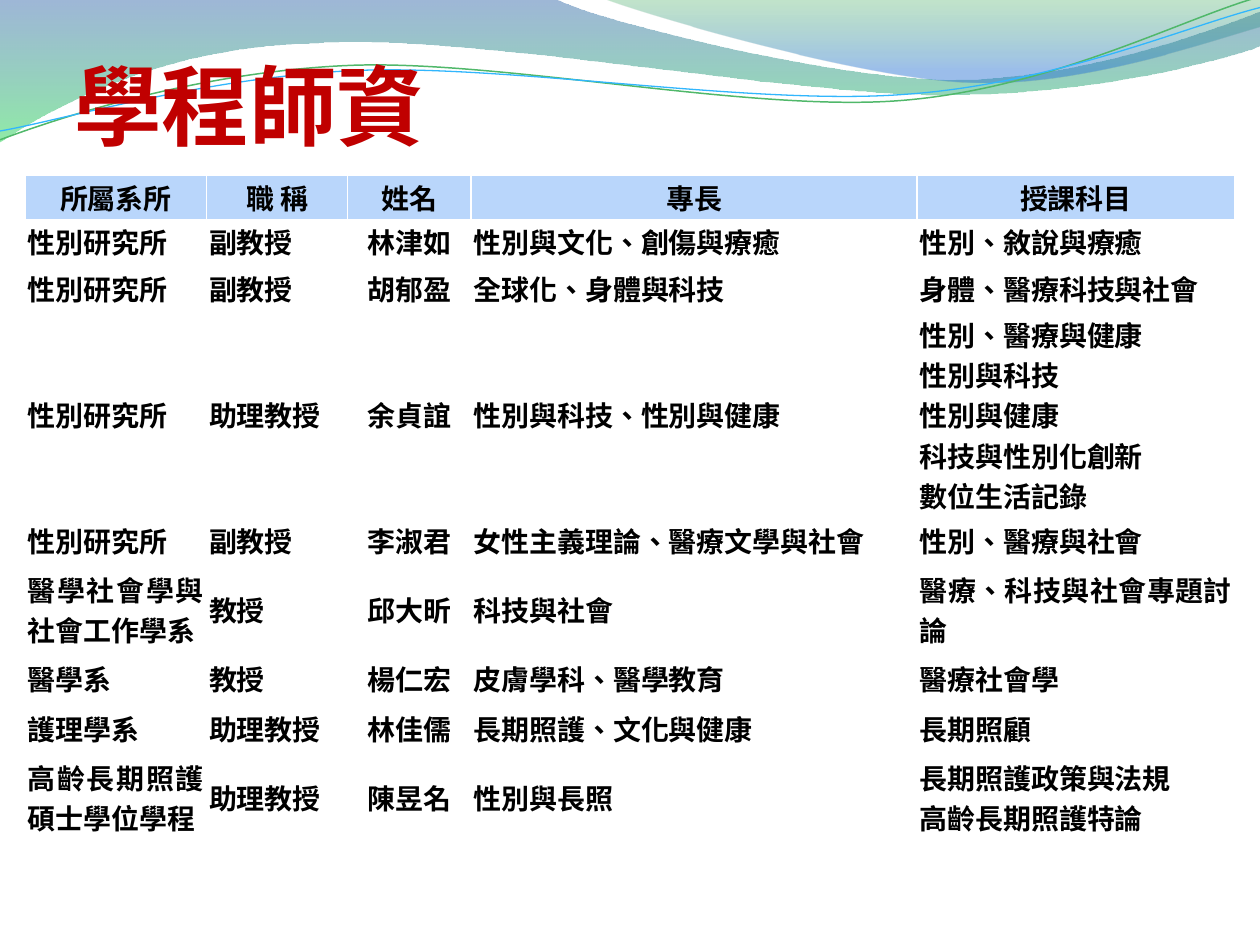
from lxml.etree import SubElement
from pptx import Presentation
from pptx.dml.color import RGBColor
from pptx.enum.lang import MSO_LANGUAGE_ID as LANG
from pptx.enum.text import MSO_ANCHOR as ANCHOR, MSO_AUTO_SIZE as AUTO, PP_ALIGN as ALIGN
from pptx.oxml.ns import qn
from pptx.util import Inches, Pt

FONT = "DejaVu Sans"
COLORS = {
    "title": "C00000", "text": "000000", "header": "B9D6FB", "border": "FFFFFF",
    "navy": "2960A7", "mint": "35DA5E", "leaf": "36A752", "blue": "2472D3",
    "green_line": "50B86A", "sky_line": "31B6FD",
}
TITLE = "學程師資"
HEADER = ("所屬系所", "職 稱", "姓名", "專長", "授課科目")
FACULTY = [
    ("性別研究所", "副教授", "林津如", "性別與文化、創傷與療癒", "性別、敘說與療癒"),
    ("性別研究所", "副教授", "胡郁盈", "全球化、身體與科技", "身體、醫療科技與社會"),
    ("性別研究所", "助理教授", "余貞誼", "性別與科技、性別與健康",
     "性別、醫療與健康\n性別與科技\n性別與健康\n科技與性別化創新\n數位生活記錄"),
    ("性別研究所", "副教授", "李淑君", "女性主義理論、醫療文學與社會", "性別、醫療與社會"),
    ("醫學社會學與社會工作學系", "教授", "邱大昕", "科技與社會", "醫療、科技與社會專題討論"),
    ("醫學系", "教授", "楊仁宏", "皮膚學科、醫學教育", "醫療社會學"),
    ("護理學系", "助理教授", "林佳儒", "長期照護、文化與健康", "長期照顧"),
    ("高齡長期照護碩士學位學程", "助理教授", "陳昱名", "性別與長照",
     "長期照護政策與法規\n高齡長期照護特論"),
]
COL_WIDTHS = (1.44, 1.12, 0.98, 3.54, 2.52)
ROW_HEIGHTS = (0.35, 0.35, 0.4, 0.69, 0.4, 0.69, 0.4, 0.4, 0.69)
NAME_COL = 2

# Each path is a start point, then segments of one (line) or three (Bezier) points.
BANDS = [
    ([(0, 0), [(4.4, -0.01)], [(4.76, 0.17), (6.64, 0.63), (7.58, 0.63)],
      [(8.53, 0.63), (9.58, 0.26), (10, 0.09)], [(10.01, 0.36)],
      [(9.83, 0.44), (8.7, 0.76), (7.46, 0.75)], [(6.22, 0.75), (3.82, 0.28), (2.57, 0.34)],
      [(1.29, 0.36), (0.46, 0.83), (-0.01, 1.13)]],
     [(0, "navy", 45), (1, "mint", 55)]),
    ([(4.79, -0.01), [(5.09, 0.11), (6.82, 0.62), (7.69, 0.65)],
      [(8.56, 0.69), (9.61, 0.32), (10, 0.21)], [(10, 0)]],
     [(0, "leaf", 30), (0.8, "blue", 45)]),
]
STROKES = [
    ([(0, 1.11), [(0.48, 0.93), (1.58, 0.57), (2.77, 0.52)],
      [(3.95, 0.47), (5.93, 0.89), (7.13, 0.8)], [(8.33, 0.71), (9.38, 0.15), (9.98, -0.02)]],
     "green_line", 0.85),
    ([(0, 1.04), [(0.47, 0.96), (1.64, 0.61), (2.83, 0.56)],
      [(4.03, 0.51), (5.97, 0.84), (7.17, 0.75)], [(8.36, 0.67), (9.41, 0.21), (10, 0.06)]],
     "sky_line", 0.75),
]


def rgb(name):
    return RGBColor.from_string(COLORS[name])


def write(tf, text, size=16, color="text", align=ALIGN.JUSTIFY):
    for i, line in enumerate(text.split("\n")):
        p = tf.paragraphs[0] if i == 0 else tf.add_paragraph()
        p.alignment = align
        r = p.add_run()
        r.text = line
        r.font.size, r.font.bold, r.font.name = Pt(size), True, FONT
        r.font.language_id = LANG.TRADITIONAL_CHINESE
        r.font.color.rgb = rgb(color)


def add_curve(shapes, path, close):
    start, *segments = path
    points = [(Inches(x), Inches(y)) for seg in segments for x, y in seg]
    builder = shapes.build_freeform(*map(Inches, start))
    builder.add_line_segments(points, close=close)
    s = builder.convert_to_shape()
    s.shadow.inherit = False
    lines = iter(list(s._element.iter(qn("a:lnTo"))))
    for seg in segments:
        parts = [next(lines) for _ in seg]
        if len(parts) == 3:
            curve = parts[0].makeelement(qn("a:cubicBezTo"))
            parts[0].addprevious(curve)
            for part in parts:
                curve.append(part[0])
                part.getparent().remove(part)
    return s


def add_waves(shapes):
    for path, stops in BANDS:
        s = add_curve(shapes, path, True)
        s.line.fill.background()
        s.fill.gradient()
        s.fill.gradient_angle = 270
        for stop, (pos, color, opacity) in zip(s.fill.gradient_stops, stops):
            stop.position = pos
            stop.color.rgb = rgb(color)
            srgb = stop._gs.find(qn("a:srgbClr"))
            SubElement(srgb, qn("a:alpha"), val=str(opacity * 1000))
    for path, color, width in STROKES:
        s = add_curve(shapes, path, False)
        s.fill.background()
        s.line.color.rgb = rgb(color)
        s.line.width = Pt(width)


def add_borders(cell):
    tc_pr = cell._tc.get_or_add_tcPr()
    for i, side in enumerate(("lnL", "lnR", "lnT", "lnB")):
        ln = tc_pr.makeelement(qn(f"a:{side}"), w=str(Pt(1)))
        fill = SubElement(ln, qn("a:solidFill"))
        SubElement(fill, qn("a:srgbClr"), val=COLORS["border"])
        tc_pr.insert(i, ln)


def add_faculty_table(shapes):
    rows = [HEADER, *FACULTY]
    table = shapes.add_table(len(rows), len(HEADER), Inches(0.2), Inches(1.39),
                             Inches(sum(COL_WIDTHS)), Inches(sum(ROW_HEIGHTS))).table
    table.first_row = table.horz_banding = False
    for col, width in zip(table.columns, COL_WIDTHS):
        col.width = Inches(width)
    for r, (row, height) in enumerate(zip(rows, ROW_HEIGHTS)):
        table.rows[r].height = Inches(height)
        for c, text in enumerate(row):
            cell = table.cell(r, c)
            cell.margin_left = cell.margin_right = Inches(0.02)
            cell.margin_top = cell.margin_bottom = 0
            cell.vertical_anchor = ANCHOR.MIDDLE
            if r == 0:
                cell.fill.solid()
                cell.fill.fore_color.rgb = rgb("header")
            else:
                cell.fill.background()
            centred = r == 0 or c == NAME_COL
            write(cell.text_frame, text, align=ALIGN.CENTER if centred else ALIGN.JUSTIFY)
            add_borders(cell)


def main():
    """Build the faculty slide."""
    prs = Presentation()
    prs.slide_width, prs.slide_height = Inches(10), Inches(7.5)
    shapes = prs.slides.add_slide(prs.slide_layouts[5]).shapes
    add_waves(shapes)

    title = shapes.title
    shapes._spTree.append(title._element)
    title.left, title.top, title.width, title.height = map(Inches, (0.59, 0, 9, 1.25))
    tf = title.text_frame
    tf.auto_size, tf.word_wrap, tf.vertical_anchor = AUTO.NONE, True, ANCHOR.BOTTOM
    tf.margin_left = tf.margin_right = tf.margin_bottom = 0
    write(tf, TITLE, size=50, color="title", align=ALIGN.LEFT)

    add_faculty_table(shapes)
    prs.save("out.pptx")


if __name__ == "__main__":
    main()
